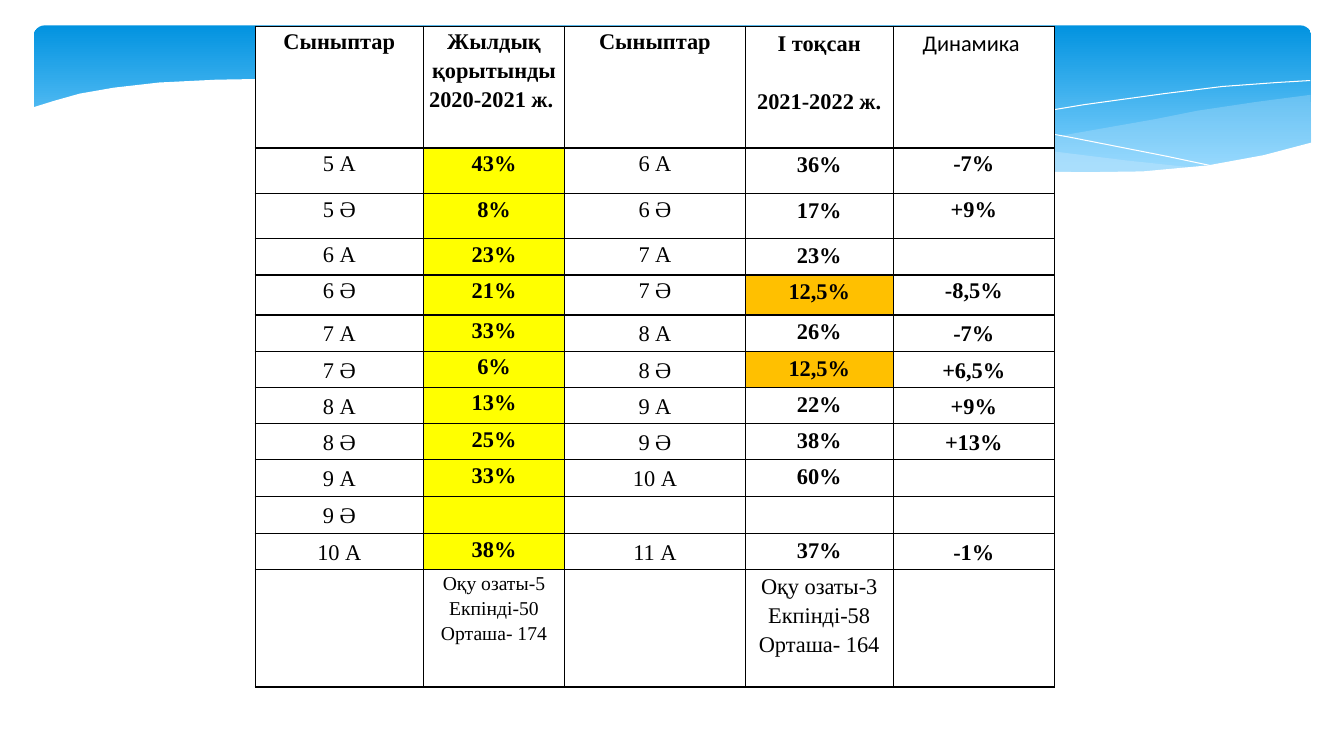
from dataclasses import dataclass

from lxml import etree
from pptx import Presentation
from pptx.dml.color import RGBColor
from pptx.enum.shapes import MSO_SHAPE
from pptx.enum.text import MSO_ANCHOR, PP_ALIGN
from pptx.oxml.ns import qn
from pptx.util import Cm, Pt

ROUNDED = MSO_SHAPE.ROUNDED_RECTANGLE
CENTER = PP_ALIGN.CENTER
TOP = MSO_ANCHOR.TOP


@dataclass(frozen=True)
class Theme:
    white: str = "FFFFFF"
    black: str = "000000"
    yellow: str = "FFFF00"
    orange: str = "FFC000"
    sky_top: str = "0293E0"
    sky_bottom: str = "83D3FE"
    veil: str = "C6E7FC"
    serif: str = "Times New Roman"
    sans: str = "Calibri"
    body_size: int = 16
    small_size: int = 14
    blank_line: int = 21
    line_spacing: float = 1.15


THEME = Theme()

HEADER = ["Сыныптар", "Жылдық\nқорытынды\n2020-2021 ж. ", "Сыныптар",
          "І тоқсан\n2021-2022 ж.", "Динамика "]
RESULTS = [
    ["5 А", "43%", "6 А", "36%", "-7%"],
    ["5 Ә", "8%", "6 Ә", "17%", "+9%"],
    ["6 А", "23%", "7 А", "23%", ""],
    ["6 Ә", "21%", "7 Ә", "12,5%", "-8,5%"],
    ["7 А", "33%", "8 А", "26%", "-7%"],
    ["7 Ә", "6%", "8 Ә", "12,5%", "+6,5%"],
    ["8 А", "13%", "9 А", "22%", "+9%"],
    ["8 Ә", "25%", "9 Ә", "38%", "+13%"],
    ["9 А", "33%", "10 А", "60%", ""],
    ["9 Ә", "", "", "", ""],
    ["10 А", "38%", "11 А", "37%", "-1%"],
]
TOTALS = ["", "Оқу озаты-5\nЕкпінді-50\nОрташа- 174", "",
          "Оқу озаты-3\nЕкпінді-58\nОрташа- 164", ""]
ROWS = [HEADER, *RESULTS, TOTALS]
LAST_ROW = len(ROWS) - 1
YEAR, QUARTER, DYNAMICS = 1, 3, 4
LOW_RESULT = "12,5%"
FIRST_PADDED_ROW = 5

# All lengths below are centimetres.
TABLE_LEFT, TABLE_TOP = 6.43, 0.66
COLUMN_WIDTHS = [4.24, 3.56, 4.55, 3.73, 4.06]
ROW_HEIGHTS = [3.07, 1.15, 1.14, 0.91, 1.01] + [0.91] * 7 + [2.95]

BACK_VEIL = [
    (33.03, 2.39), (31.65, 2.57), (30.18, 2.79), (29.13, 3), (27.25, 3.33),
    (25.53, 3.63), (23.9, 3.86), (22.4, 4.06), (23.88, 4.19), (25.22, 4.29),
    (26.44, 4.37), (27.91, 4.37), (29.24, 4.32), (30.66, 4.14), (31.93, 3.91),
    (33.05, 3.61)]
FRONT_VEIL = [
    (30.23, 4.24), (28.35, 4.04), (26.26, 3.78), (23.9, 3.4), (21.31, 2.95),
    (19.28, 2.59), (17.42, 2.34), (15.72, 2.18), (13.51, 2.03), (11.66, 2.03),
    (9.7, 2.18), (11.58, 2.39), (13.69, 2.69), (15.21, 2.95), (17.93, 3.43),
    (20.37, 3.81), (22.53, 4.09), (24.46, 4.27), (26.16, 4.37), (27.69, 4.39),
    (29.03, 4.34)]
FALLING_LINE = [
    (10.46, 2.29), (11.63, 2.13), (13.59, 2.08), (15.88, 2.11), (18.03, 2.24),
    (20.6, 2.49), (22.5, 2.74), (24.64, 3.05), (26.92, 3.45), (29.41, 3.94),
    (30.73, 4.22)]
RISING_LINE = [
    (20.78, 3.84), (22.76, 3.43), (25.32, 2.97), (27.31, 2.64), (29.34, 2.36),
    (30.81, 2.18), (32.18, 2.08), (33.02, 2.03)]
WHITE_WAVE = [
    (33.1, 3.58), (31.85, 3.91), (30.43, 4.17), (28.8, 4.32), (27.38, 4.34),
    (25.78, 4.32), (23.98, 4.19), (21.92, 3.96), (19.61, 3.66), (17.04, 3.25),
    (15.14, 2.9), (13.23, 2.59), (11.51, 2.34), (9.17, 2.08), (7.16, 1.98),
    (5.44, 2.01), (4.01, 2.08), (2.87, 2.21), (2.01, 2.36), (1.37, 2.54),
    (0.79, 2.72), (0.79, 5.69), (33.1, 5.69)]


def color(code):
    return RGBColor.from_string(code)


def add_sky(page):
    sky = page.shapes.add_shape(ROUNDED, Cm(0.85), Cm(0.64), Cm(32.2), Cm(3.96))
    sky.shadow.inherit = False
    sky.adjustments[0] = 0.07
    sky.line.fill.background()
    sky.fill.gradient()
    sky.fill.gradient_angle = 270
    stops = ((0, THEME.sky_top), (0.9, THEME.sky_bottom))
    for stop, (position, code) in zip(sky.fill.gradient_stops, stops):
        stop.position = position
        stop.color.rgb = color(code)


def add_outline(page, points, closed):
    corners = [(Cm(x), Cm(y)) for x, y in points]
    builder = page.shapes.build_freeform(*corners[0])
    builder.add_line_segments(corners[1:], close=closed)
    outline = builder.convert_to_shape()
    outline.shadow.inherit = False
    return outline


def add_wave(page, points, code, opacity=100):
    wave = add_outline(page, points, closed=True)
    wave.line.fill.background()
    wave.fill.solid()
    wave.fill.fore_color.rgb = color(code)
    if opacity < 100:
        tint = wave.fill._xPr.find(qn("a:solidFill"))[0]
        etree.SubElement(tint, qn("a:alpha"), val=str(opacity * 1000))


def add_thin_line(page, points):
    curve = add_outline(page, points, closed=False)
    curve.fill.background()
    curve.line.color.rgb = color(THEME.white)
    curve.line.width = Pt(0)


def add_borders(cell):
    properties = cell._tc.get_or_add_tcPr()
    for side in ("lnL", "lnR", "lnT", "lnB"):
        border = etree.SubElement(properties, qn(f"a:{side}"), w=str(Pt(1)))
        paint = etree.SubElement(border, qn("a:solidFill"))
        etree.SubElement(paint, qn("a:srgbClr"), val=THEME.black)


def cell_color(row, column, words):
    if column == YEAR and 0 < row < LAST_ROW:
        return THEME.yellow
    return THEME.orange if words == LOW_RESULT else THEME.white


def cell_margins(row, column):
    """Return the side, top and bottom margins."""
    if column == QUARTER:
        return 0.03, 0.03, 0
    if column == YEAR:
        return (0.17 if row else 0.1), 0, 0
    return (0.13, 0.08, 0.08) if row >= FIRST_PADDED_ROW else (0.1, 0, 0)


def is_bold(row, column):
    if row == 0:
        return column != DYNAMICS
    return row < LAST_ROW and column in (YEAR, QUARTER, DYNAMICS)


def fill_cell(cell, row, column, words):
    add_borders(cell)
    cell.fill.solid()
    cell.fill.fore_color.rgb = color(cell_color(row, column, words))
    side, top, bottom = cell_margins(row, column)
    cell.margin_left = cell.margin_right = Cm(side)
    cell.margin_top, cell.margin_bottom = Cm(top), Cm(bottom)
    cell.vertical_anchor = TOP
    if not words:
        return
    small = (row, column) == (LAST_ROW, YEAR)
    sans = (row, column) == (0, DYNAMICS)
    for index, line in enumerate(words.split("\n")):
        frame = cell.text_frame
        para = frame.add_paragraph() if index else frame.paragraphs[0]
        para.alignment = CENTER
        para.line_spacing = THEME.line_spacing
        if index and (row, column) == (0, QUARTER):
            para.space_before = Pt(THEME.blank_line)
        span = para.add_run()
        span.text = line
        span.font.name = THEME.sans if sans else THEME.serif
        span.font.size = Pt(THEME.small_size if small else THEME.body_size)
        span.font.bold = is_bold(row, column)
        span.font.color.rgb = color(THEME.black)


def add_results(page):
    table = page.shapes.add_table(
        len(ROWS), len(HEADER), Cm(TABLE_LEFT), Cm(TABLE_TOP),
        Cm(sum(COLUMN_WIDTHS)), Cm(sum(ROW_HEIGHTS))).table
    for column, width in zip(table.columns, COLUMN_WIDTHS):
        column.width = Cm(width)
    for row, (height, texts) in enumerate(zip(ROW_HEIGHTS, ROWS)):
        table.rows[row].height = Cm(height)
        for column, words in enumerate(texts):
            fill_cell(table.cell(row, column), row, column, words)


def main():
    deck = Presentation()
    deck.slide_width, deck.slide_height = Cm(33.87), Cm(19.05)
    page = deck.slides.add_slide(deck.slide_layouts[6])
    add_sky(page)
    add_wave(page, BACK_VEIL, THEME.veil, opacity=29)
    add_wave(page, FRONT_VEIL, THEME.veil, opacity=40)
    add_thin_line(page, FALLING_LINE)
    add_thin_line(page, RISING_LINE)
    add_wave(page, WHITE_WAVE, THEME.white)
    add_results(page)
    deck.save("out.pptx")


if __name__ == "__main__":
    main()
